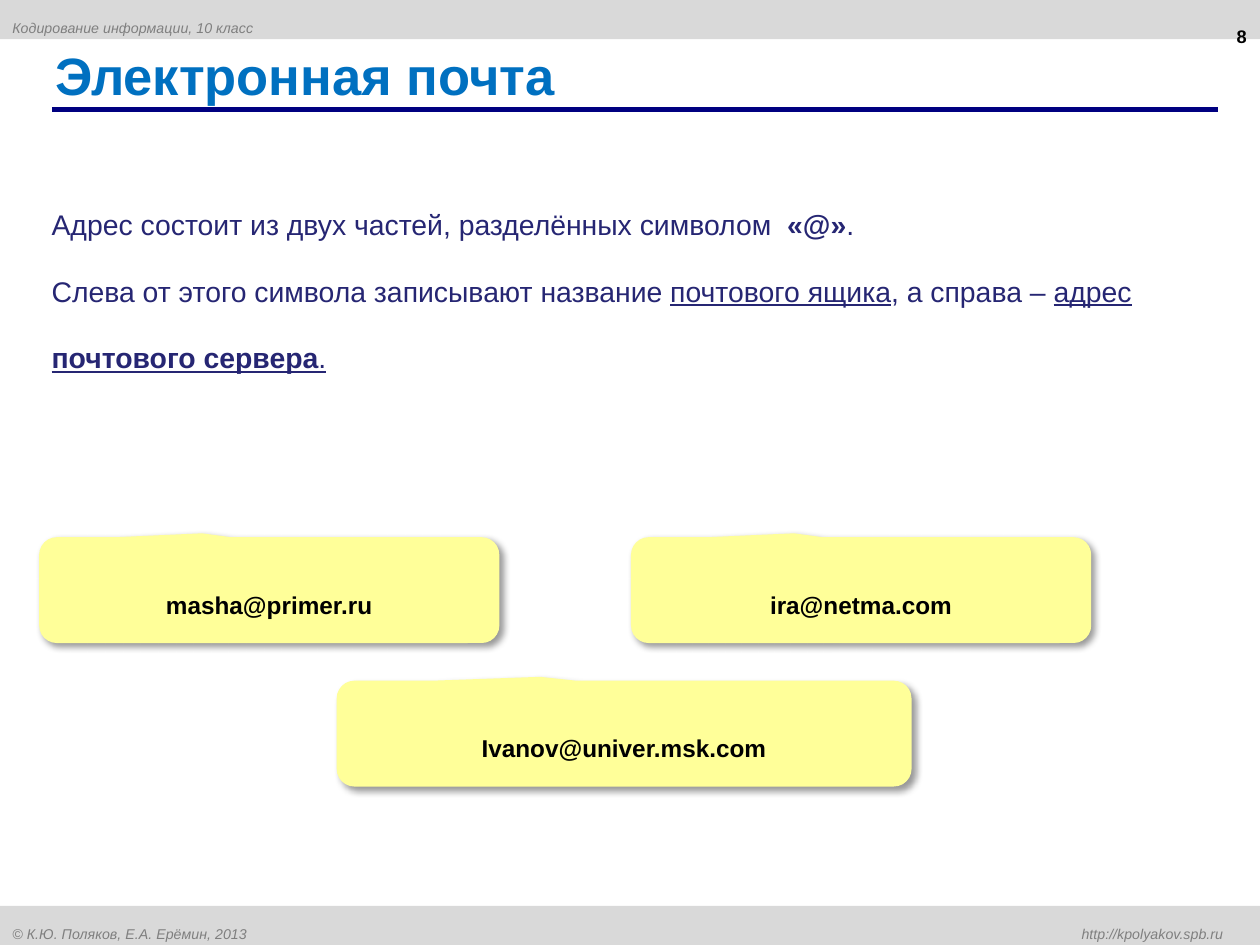
from lxml.etree import SubElement
from pptx import Presentation
from pptx.dml.color import RGBColor
from pptx.enum.shapes import MSO_CONNECTOR as Connector, MSO_SHAPE as Shape
from pptx.enum.text import MSO_ANCHOR as Anchor, PP_ALIGN as Align
from pptx.oxml import parse_xml
from pptx.oxml.ns import nsdecls, qn
from pptx.util import Pt

GREY = RGBColor(0xD9, 0xD9, 0xD9)
DARK_GREY = RGBColor(0x7F, 0x7F, 0x7F)
NAVY = RGBColor(0x00, 0x00, 0x80)
BLUE = RGBColor(0x00, 0x70, 0xC0)
INDIGO = RGBColor(0x26, 0x26, 0x73)
YELLOW = RGBColor(0xFF, 0xFF, 0x99)
BLACK = RGBColor(0x00, 0x00, 0x00)

WIDTH, HEIGHT = 720, 540
BAR_HEIGHT = 22.4
CARD_HEIGHT = 60.5

SHADOW = (
    f'<a:effectLst {nsdecls("a")}>'
    '<a:outerShdw blurRad="50800" dist="38100" dir="2700000" algn="tl" rotWithShape="0">'
    '<a:srgbClr val="000000"><a:alpha val="40000"/></a:srgbClr>'
    '</a:outerShdw></a:effectLst>'
)


class SlideBuilder:
    font_name = "Arial"

    def __init__(self, slide):
        self.slide = slide

    def style(self, span, size, color, bold=False, italic=False, underline=False, lowered=True):
        font = span.font
        font.name = self.font_name
        font.size = Pt(size)
        font.color.rgb = color
        font.bold, font.italic, font.underline = bold, italic, underline
        if lowered:
            span._r.get_or_add_rPr().set("baseline", "-25000")

    def title(self, text, left, top, width, height):
        box = self.slide.shapes.title
        box.left, box.top, box.width, box.height = map(Pt, (left, top, width, height))
        frame = box.text_frame
        frame.text = text
        frame.vertical_anchor = Anchor.MIDDLE
        para = frame.paragraphs[0]
        para.alignment = Align.LEFT
        self.style(para.runs[0], 30, BLUE, bold=True, lowered=False)

    def shape(self, kind, left, top, width, height, fill):
        box = self.slide.shapes.add_shape(kind, *map(Pt, (left, top, width, height)))
        box.shadow.inherit = False
        box.fill.solid()
        box.fill.fore_color.rgb = fill
        box.line.fill.background()
        box.text_frame.vertical_anchor = Anchor.MIDDLE
        return box

    def bar(self, text, top):
        box = self.shape(Shape.RECTANGLE, 0, top, WIDTH, BAR_HEIGHT, GREY)
        box.text_frame.text = text
        para = box.text_frame.paragraphs[0]
        para.alignment = Align.LEFT
        tabs = SubElement(para._p.get_or_add_pPr(), qn("a:tabLst"))
        SubElement(tabs, qn("a:tab"), pos=str(Pt(692)), algn="r")
        for span in para.runs:
            self.style(span, 14, DARK_GREY, italic=True)

    def rule(self, left, right, top):
        line = self.slide.shapes.add_connector(
            Connector.STRAIGHT, Pt(left), Pt(top), Pt(right), Pt(top))
        line.line.color.rgb = NAVY
        line.line.width = Pt(3)
        SubElement(line._element.spPr, qn("a:effectLst"))

    def text(self, paragraphs, left, top, width, height, size, color, align=Align.LEFT):
        box = self.slide.shapes.add_textbox(*map(Pt, (left, top, width, height)))
        frame = box.text_frame
        frame.word_wrap = True
        for index, parts in enumerate(paragraphs):
            para = frame.add_paragraph() if index else frame.paragraphs[0]
            para.alignment = align
            for text, marks in parts:
                span = para.add_run()
                span.text = text
                self.style(span, size, color, bold="b" in marks, underline="u" in marks)

    def card(self, text, left, top, width):
        box = self.shape(Shape.ROUNDED_RECTANGULAR_CALLOUT, left, top, width, CARD_HEIGHT, YELLOW)
        for index, value in enumerate((-0.146, -0.537, 0.167)):
            box.adjustments[index] = value
        properties = box._element.spPr
        properties.replace(properties.find(qn("a:effectLst")), parse_xml(SHADOW))
        box.text_frame.text = text
        para = box.text_frame.paragraphs[0]
        para.alignment = Align.CENTER
        para.line_spacing = 0.8
        self.style(para.runs[0], 24, BLACK, bold=True)


def main():
    deck = Presentation()
    deck.slide_width, deck.slide_height = Pt(WIDTH), Pt(HEIGHT)
    page = SlideBuilder(deck.slides.add_slide(deck.slide_layouts[5]))

    page.bar("Кодирование информации, 10 класс", 0)
    page.rule(29.6, 696, 62.5)
    page.bar("© К.Ю. Поляков, Е.А. Ерёмин, 2013 \thttp://kpolyakov.spb.ru", HEIGHT - BAR_HEIGHT)
    page.title("Электронная почта", 24.3, 23.6, 659.5, 37.5)
    page.text([[("8", "b")]], 551.5, -1.4, 168, 37.5, 18, BLACK, Align.RIGHT)

    body = [
        [("Адрес состоит из двух частей, разделённых символом  ", ""), ("«@»", "b"), (".", "")],
        [("Слева от этого символа записывают название ", ""), ("почтового ящика", "u"),
         (", а справа – ", ""), ("адрес ", "u"), ("почтового сервера", "bu"), (".", "u")],
    ]
    page.text(body, 22.4, 95.8, 677, 177, 28, INDIGO)

    cards = [
        ("masha@primer.ru", 22.4, 307, 263),
        ("Ivanov@univer.msk.com", 192.4, 389, 328.5),
        ("ira@netma.com", 360.6, 307, 263),
    ]
    for card in cards:
        page.card(*card)

    deck.save("out.pptx")


if __name__ == "__main__":
    main()
